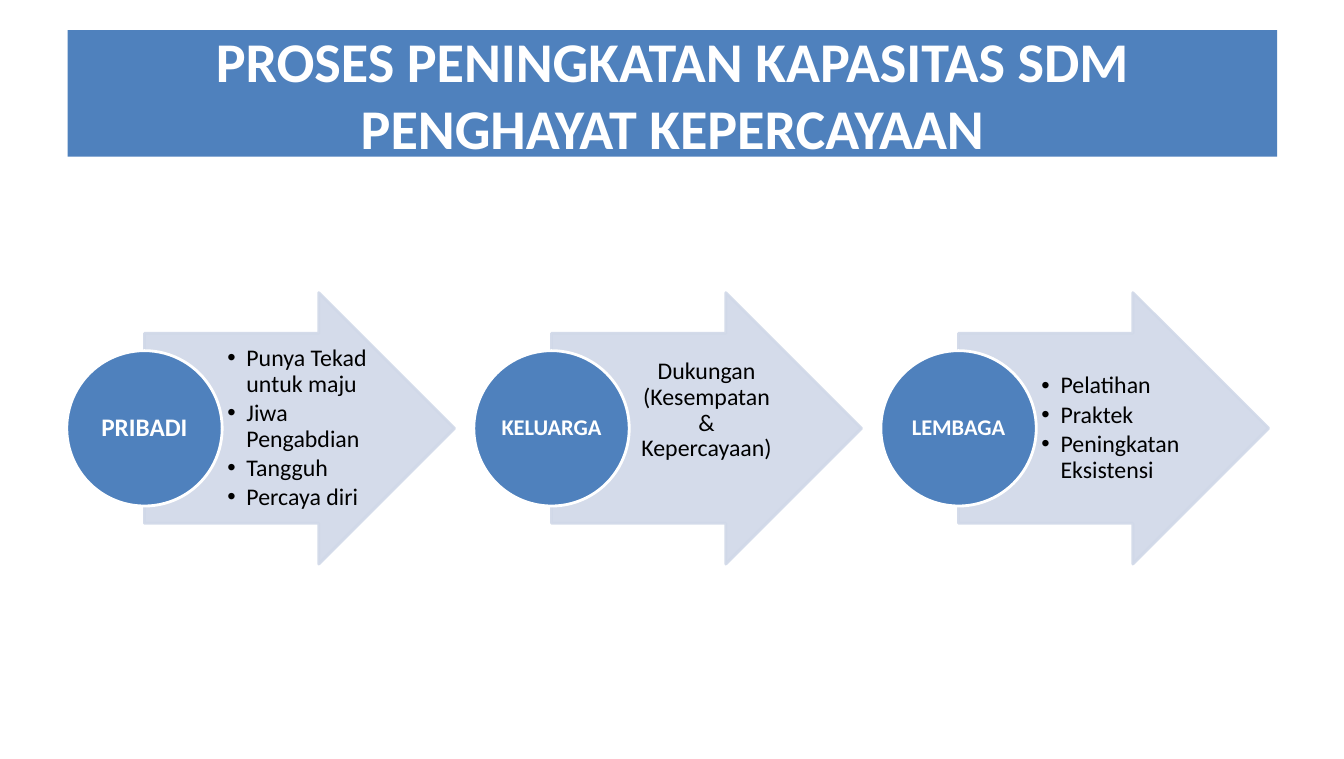
from lxml import etree
from pptx import Presentation
from pptx import util as u
from pptx.dml.color import RGBColor
from pptx.enum import shapes, text
from pptx.oxml.ns import qn

# Content
TITLE = ["PROSES PENINGKATAN KAPASITAS SDM", "PENGHAYAT KEPERCAYAAN"]
# name, name size, bulleted, bottom inset, lines
STEPS = [
    ("PRIBADI", 18, True, 0.03,
     ["Punya Tekad untuk maju", "Jiwa Pengabdian", "Tangguh", "Percaya diri"]),
    ("KELUARGA", 16, False, 0.93, ["Dukungan (Kesempatan & Kepercayaan)"]),
    ("LEMBAGA", 16, True, 0.03,
     ["Pelatihan", "Praktek", "Peningkatan Eksistensi"]),
]
HUE = {"blue": "4F81BD", "pale": "D0D8E8", "white": "FFFFFF", "black": "000000"}

# Layout in centimetres
LEFT, STEP, MID = 1.68, 10.24, 10.78
DISC = 3.91
ARROW = (7.8, 6.83)
NOTE = (3.81, 4.78)


def rgb(name):
    return RGBColor.from_string(HUE[name])


def box(left, size):
    """Place a box of the given size on the middle line."""
    wide, high = size
    return [u.Cm(v) for v in (left, MID - high / 2, wide, high)]


def inset(frame, left, top, right, bottom):
    frame.margin_left, frame.margin_top = u.Cm(left), u.Cm(top)
    frame.margin_right, frame.margin_bottom = u.Cm(right), u.Cm(bottom)
    frame.word_wrap = True
    frame.auto_size = text.MSO_AUTO_SIZE.NONE
    frame.vertical_anchor = text.MSO_ANCHOR.MIDDLE


def write(para, words, size, hue, bold=False):
    run = para.add_run()
    run.text = words
    font = run.font
    font.name, font.size, font.bold = "Calibri", u.Pt(size), bold
    font.color.rgb = rgb(hue)


def bullet(para):
    props = para._p.get_or_add_pPr()
    props.set("marL", str(u.Cm(0.48)))
    props.set("indent", str(-u.Cm(0.48)))
    etree.SubElement(props, qn("a:buFont")).set("typeface", "Arial")
    etree.SubElement(props, qn("a:buChar")).set("char", "•")


def draw(kind, place, fill, line):
    shape = slide.shapes.add_shape(kind, *place)
    shape.shadow.inherit = False
    shape.fill.solid()
    shape.fill.fore_color.rgb = rgb(fill)
    shape.line.color.rgb = rgb(line)
    shape.line.width = u.Pt(2)
    return shape


deck = Presentation()
deck.slide_width, deck.slide_height = u.Cm(33.81), u.Cm(19.1)
slide = deck.slides.add_slide(deck.slide_layouts[5])

# Title band
head = slide.shapes.title
head.left, head.top, head.width, head.height = (
    u.Cm(v) for v in (1.7, 0.76, 30.43, 3.18))
head.fill.solid()
head.fill.fore_color.rgb = rgb("blue")
inset(head.text_frame, 0.3, 0.15, 0.3, 0.15)
para = head.text_frame.paragraphs[0]
para.alignment = text.PP_ALIGN.CENTER
for i, words in enumerate(TITLE):
    if i:
        para.add_line_break()
    write(para, words, 40, "white", True)

# Steps: arrow, note, disc
for i, (name, size, dots, low, lines) in enumerate(STEPS):
    left = LEFT + i * STEP

    arrow = draw(shapes.MSO_SHAPE.RIGHT_ARROW,
                 box(left + DISC / 2, ARROW), "pale", "pale")
    arrow.adjustments[0], arrow.adjustments[1] = 0.7, 0.5
    for tint in arrow._element.spPr.iter(qn("a:srgbClr")):
        etree.SubElement(tint, qn("a:alpha")).set("val", "90000")

    note = slide.shapes.add_textbox(*box(left + DISC, NOTE)).text_frame
    inset(note, 0.13, 0.03, 0.05, low)
    for j, words in enumerate(lines):
        para = note.add_paragraph() if j else note.paragraphs[0]
        para.line_spacing = 0.9
        para.space_after = u.Pt(2.5)
        para.alignment = text.PP_ALIGN.LEFT if dots else text.PP_ALIGN.CENTER
        if dots:
            bullet(para)
        write(para, words, 17, "black")

    disc = draw(shapes.MSO_SHAPE.OVAL, box(left, (DISC, DISC)), "blue", "white")
    inset(disc.text_frame, 0.03, 0.03, 0.03, 0.03)
    para = disc.text_frame.paragraphs[0]
    para.alignment = text.PP_ALIGN.CENTER
    para.line_spacing = 0.9
    write(para, name, size, "white", True)

deck.save("out.pptx")
